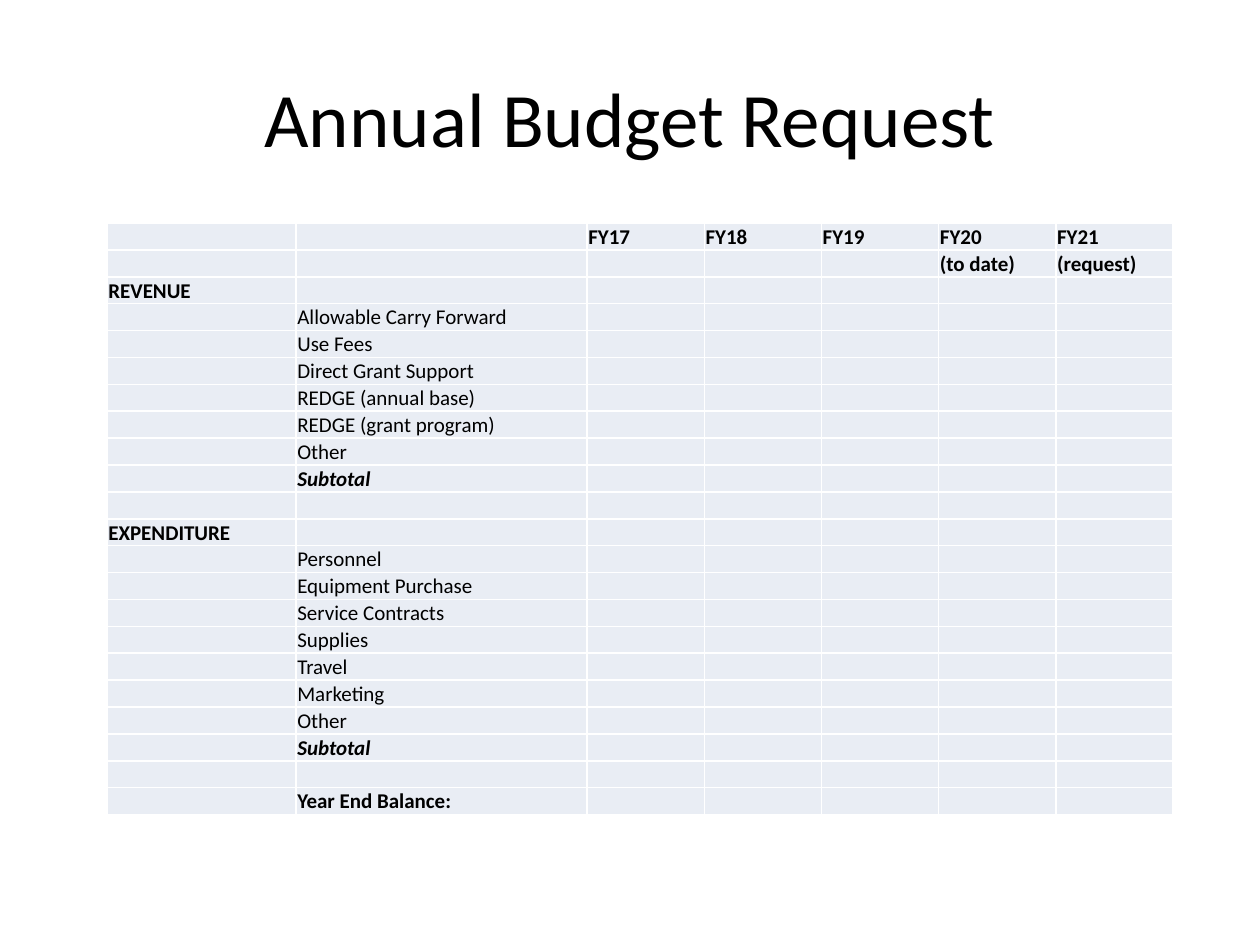
from dataclasses import dataclass
from lxml import etree
from pptx import Presentation
from pptx import util as u
from pptx.dml.color import RGBColor
from pptx.enum import text
from pptx.oxml.ns import qn


@dataclass(frozen=True)
class Theme:
    font: str = "Calibri"
    ink: str = "000000"
    cell: str = "E9EDF4"
    rule: str = "FFFFFF"
    head: float = 44
    body: float = 12
    line: float = 1


THEME = Theme()
WIDE, HIGH = 10, 7.5
COLS = [1.5, 2.31] + [0.93] * 5
BOLD = {"bold": True}
SUM = {"bold": True, "italic": True}
YEARS = ["FY17", "FY18", "FY19", "FY20", "FY21"]
NOTES = ["(to date)", "(request)"]
GROUPS = {
    "REVENUE": [
        "Allowable Carry Forward", "Use Fees", "Direct Grant Support",
        "REDGE (annual base)", "REDGE (grant program)", "Other",
    ],
    "EXPENDITURE": [
        "Personnel", "Equipment Purchase", "Service Contracts",
        "Supplies", "Travel", "Marketing", "Other",
    ],
}


def write(frame, words, size=THEME.body, bold=False, italic=False,
          align=text.PP_ALIGN.LEFT):
    para = frame.paragraphs[0]
    para.alignment = align
    if not words:
        end = etree.SubElement(para._p, qn("a:endParaRPr"))
        end.set("sz", str(int(size * 100)))
        etree.SubElement(end, qn("a:latin")).set("typeface", THEME.font)
        return
    run = para.add_run()
    run.text = words
    font = run.font
    font.name, font.size = THEME.font, u.Pt(size)
    font.bold, font.italic = bold, italic
    font.color.rgb = RGBColor.from_string(THEME.ink)


def title(slide, words):
    box = slide.shapes.title
    box.left, box.top = u.Inches(WIDE * 0.05), u.Inches(HIGH * 0.04)
    box.width, box.height = u.Inches(WIDE * 0.9), u.Inches(HIGH / 6)
    box.text_frame.vertical_anchor = text.MSO_ANCHOR.MIDDLE
    write(box.text_frame, words, size=THEME.head, align=text.PP_ALIGN.CENTER)


def border(cell):
    props = cell._tc.get_or_add_tcPr()
    for side in ("lnL", "lnR", "lnT", "lnB"):
        line = etree.SubElement(props, qn(f"a:{side}"), w=str(u.Pt(THEME.line)))
        fill = etree.SubElement(line, qn("a:solidFill"))
        etree.SubElement(fill, qn("a:srgbClr"), val=THEME.rule)


def style(cell, words="", **form):
    border(cell)
    cell.fill.solid()
    cell.fill.fore_color.rgb = RGBColor.from_string(THEME.cell)
    cell.margin_left = cell.margin_right = cell.margin_top = u.Inches(0.01)
    cell.margin_bottom = 0
    cell.vertical_anchor = text.MSO_ANCHOR.BOTTOM
    write(cell.text_frame, words, **form)


def layout():
    rows = [
        {col: (year, BOLD) for col, year in enumerate(YEARS, 2)},
        {col: (note, BOLD) for col, note in enumerate(NOTES, 5)},
    ]
    for name, items in GROUPS.items():
        rows.append({0: (name, BOLD)})
        rows += [{1: (item, {})} for item in items]
        rows += [{1: ("Subtotal", SUM)}, {}]
    return rows + [{1: ("Year End Balance:", BOLD)}]


def budget(slide, rows):
    step = u.Inches(4.7 / len(rows))
    grid = slide.shapes.add_table(
        len(rows), len(COLS), u.Inches(0.85), u.Inches(1.77),
        u.Inches(sum(COLS)), step * len(rows)).table
    grid.first_row = grid.horz_banding = False
    for col, width in zip(grid.columns, COLS):
        col.width = u.Inches(width)
    for at, row in enumerate(rows):
        grid.rows[at].height = step
        for col in range(len(COLS)):
            words, form = row.get(col, ("", {}))
            style(grid.cell(at, col), words, **form)


def main():
    deck = Presentation()
    deck.slide_width, deck.slide_height = u.Inches(WIDE), u.Inches(HIGH)
    slide = deck.slides.add_slide(deck.slide_layouts[5])
    title(slide, "Annual Budget Request")
    budget(slide, layout())
    deck.save("out.pptx")


if __name__ == "__main__":
    main()
